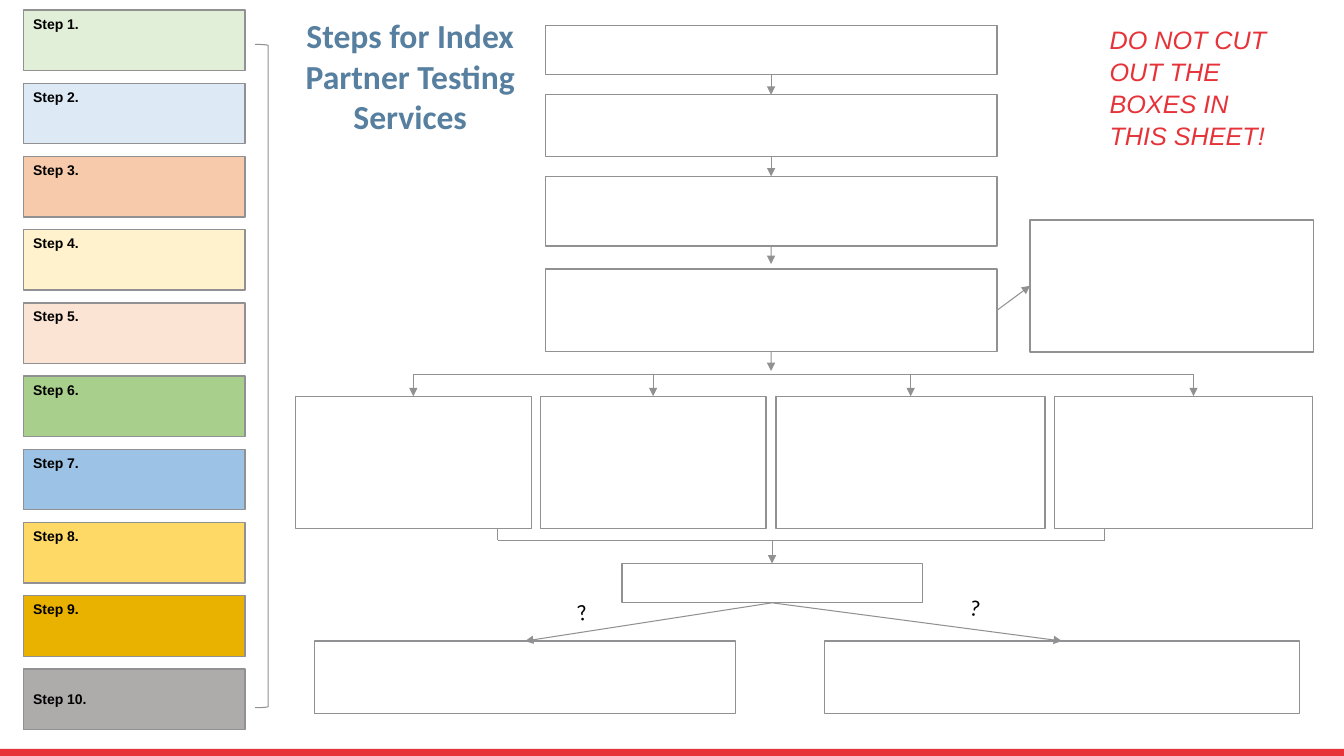
"""Build the worksheet slide on the steps of index partner testing services."""
from lxml.etree import SubElement
from pptx import Presentation
from pptx.dml.color import RGBColor
from pptx.enum.shapes import MSO_CONNECTOR as CONNECTOR, MSO_SHAPE as SHAPE
from pptx.enum.text import MSO_ANCHOR as ANCHOR, MSO_AUTO_SIZE as AUTO, PP_ALIGN as ALIGN
from pptx.oxml.ns import qn
from pptx.util import Pt

GREY, RED, BLUE, BLACK = "919194", "E73439", "577F9F", "000000"
STEP_FILLS = ["E1EFD8", "DDEAF6", "F7CAAC", "FFF2CC", "FBE4D4",
              "A8D08C", "9CC2E5", "FFD966", "EAB200", "AEABAB"]
STEP_LEFT, STEP_TOP, STEP_WIDTH, STEP_HEIGHT, STEP_PITCH = 16.6, 7.2, 158.4, 43.2, 52.3

MAIN_LEFT, MAIN_WIDTH = 389.5, 322.6
MAIN_ROWS = [(18, 35.3), (67.7, 43.9), (126, 49.7), (192.2, 59)]
CONTACT = (735.8, 157, 202.3, 94.3)
OPTION_TOP, OPTION_HEIGHT = 283, 94.3
OPTIONS = [(211, 168.5), (385.9, 161.3), (554.4, 192.2), (753.1, 184.3)]
TEST = (444.2, 402.5, 214.6, 28.1)
OUTCOME_TOP, OUTCOME_HEIGHT = 457.9, 51.8
OUTCOMES = [(224.6, 301), (589, 339.1)]

SPLIT_Y, LAST_DROP_X = 267.5, 852.5
JOIN_Y, JOIN_LEFT, JOIN_RIGHT = 386, 355.7, 789.1
TOP, LEFT, BOTTOM, RIGHT = range(4)

TITLE = "Steps for Index Partner Testing Services"
WARNING = "DO NOT CUT OUT THE BOXES IN THIS SHEET!"
QUESTIONS = [(389.5, 424.1, -9.2), (670.3, 420.5, 8.2)]

deck = Presentation()
deck.slide_width, deck.slide_height = Pt(960), Pt(540)
page = deck.slides.add_slide(deck.slide_layouts[6])


def color(value):
    return RGBColor.from_string(value)


def add_box(area, fill=None, line=GREY, width=1, kind=SHAPE.RECTANGLE):
    box = page.shapes.add_shape(kind, *map(Pt, area))
    box.shadow.inherit = False
    if fill:
        box.fill.solid()
        box.fill.fore_color.rgb = color(fill)
    else:
        box.fill.background()
    if line:
        box.line.color.rgb = color(line)
        box.line.width = Pt(width)
    else:
        box.line.fill.background()
    return box


def write(box, text, size, font, ink, align=ALIGN.LEFT, anchor=ANCHOR.TOP, bold=False, italic=False):
    frame = box.text_frame
    frame.word_wrap = True
    frame.vertical_anchor = anchor
    frame.text = text
    para = frame.paragraphs[0]
    para.alignment = align
    span = para.runs[0]
    span.font.size, span.font.name = Pt(size), font
    span.font.bold, span.font.italic = bold, italic
    span.font.color.rgb = color(ink)
    return para


def add_text(area, *style, **options):
    box = page.shapes.add_textbox(*map(Pt, area))
    return box, write(box, *style, **options)


def side(box, site):
    x = box.left + (0, box.width)[site == RIGHT]
    y = box.top + (0, box.height)[site == BOTTOM]
    if site in (TOP, BOTTOM):
        return box.left + box.width // 2, y
    return x, box.top + box.height // 2


def add_line(start, end, arrow=True):
    """Draw a line between ends given as (x, y) in points or as (box, side)."""
    joined = [not isinstance(spot[0], (int, float)) for spot in (start, end)]
    ends = [side(*spot) if join else tuple(map(Pt, spot))
            for spot, join in zip((start, end), joined)]
    line = page.shapes.add_connector(CONNECTOR.STRAIGHT, *ends[0], *ends[1])
    if joined[0]:
        line.begin_connect(*start)
    if joined[1]:
        line.end_connect(*end)
    line.line.color.rgb = color(GREY)
    line.line.width = Pt(0.75)
    if arrow:
        SubElement(line.line._get_or_add_ln(), qn("a:tailEnd"), type="triangle")
    SubElement(line._element.spPr, qn("a:effectLst"))


for index, fill in enumerate(STEP_FILLS):
    step = add_box((STEP_LEFT, STEP_TOP + index * STEP_PITCH, STEP_WIDTH, STEP_HEIGHT), fill)
    last = index == len(STEP_FILLS) - 1
    write(step, f"Step {index + 1}.", 10, "Arial", BLACK, bold=True,
          anchor=ANCHOR.MIDDLE if last else ANCHOR.TOP)
add_box((182.2, 31.7, 9.4, 473.8), width=0.75, kind=SHAPE.RIGHT_BRACKET)

main = [add_box((MAIN_LEFT, top, MAIN_WIDTH, height)) for top, height in MAIN_ROWS]
contact = add_box(CONTACT)
options = [add_box((left, OPTION_TOP, width, OPTION_HEIGHT)) for left, width in OPTIONS]
test = add_box(TEST)
outcomes = [add_box((left, OUTCOME_TOP, width, OUTCOME_HEIGHT)) for left, width in OUTCOMES]

main_x = MAIN_LEFT + MAIN_WIDTH / 2
add_line((main[0], BOTTOM), (main[1], TOP))
add_line((main[1], BOTTOM), (main[2], TOP))
add_line((main[2], BOTTOM), (main_x, 188.6))
add_line((main[3], BOTTOM), (main_x, 265))
add_line((main[3], RIGHT), (contact, LEFT))

first_drop_x = OPTIONS[0][0] + OPTIONS[0][1] / 2
add_line((first_drop_x, SPLIT_Y), (LAST_DROP_X, SPLIT_Y), arrow=False)
for (left, width), option in zip(OPTIONS[:-1], options):
    add_line((left + width / 2, SPLIT_Y), (option, TOP))
add_line((LAST_DROP_X, SPLIT_Y), (LAST_DROP_X, OPTION_TOP))

add_line((JOIN_LEFT, JOIN_Y), (JOIN_RIGHT, JOIN_Y), arrow=False)
for x in (JOIN_LEFT, JOIN_RIGHT):
    add_line((x, JOIN_Y), (x, OPTION_TOP + OPTION_HEIGHT), arrow=False)
add_line((TEST[0] + TEST[2] / 2, JOIN_Y), (test, TOP))
for outcome in outcomes:
    add_line((test, BOTTOM), (outcome, TOP))

for left, top, angle in QUESTIONS:
    mark, _ = add_text((left, top, 52.6, 26.6), "?", 16, "Calibri", BLACK, align=ALIGN.CENTER)
    mark.rotation = angle
    mark.text_frame.auto_size = AUTO.SHAPE_TO_FIT_TEXT
add_text((202.3, 7.9, 181.4, 92.2), TITLE, 24, "Calibri", BLUE,
         align=ALIGN.CENTER, anchor=ANCHOR.MIDDLE, bold=True)
warning, para = add_text((785.5, 13, 144, 94.3), WARNING, 18, "Arial", "E63339", italic=True)
para.line_spacing = 1.05
warning.text_frame.auto_size = AUTO.SHAPE_TO_FIT_TEXT
add_box((0, 535, 960, 5), RED, line=None)

deck.save("out.pptx")
